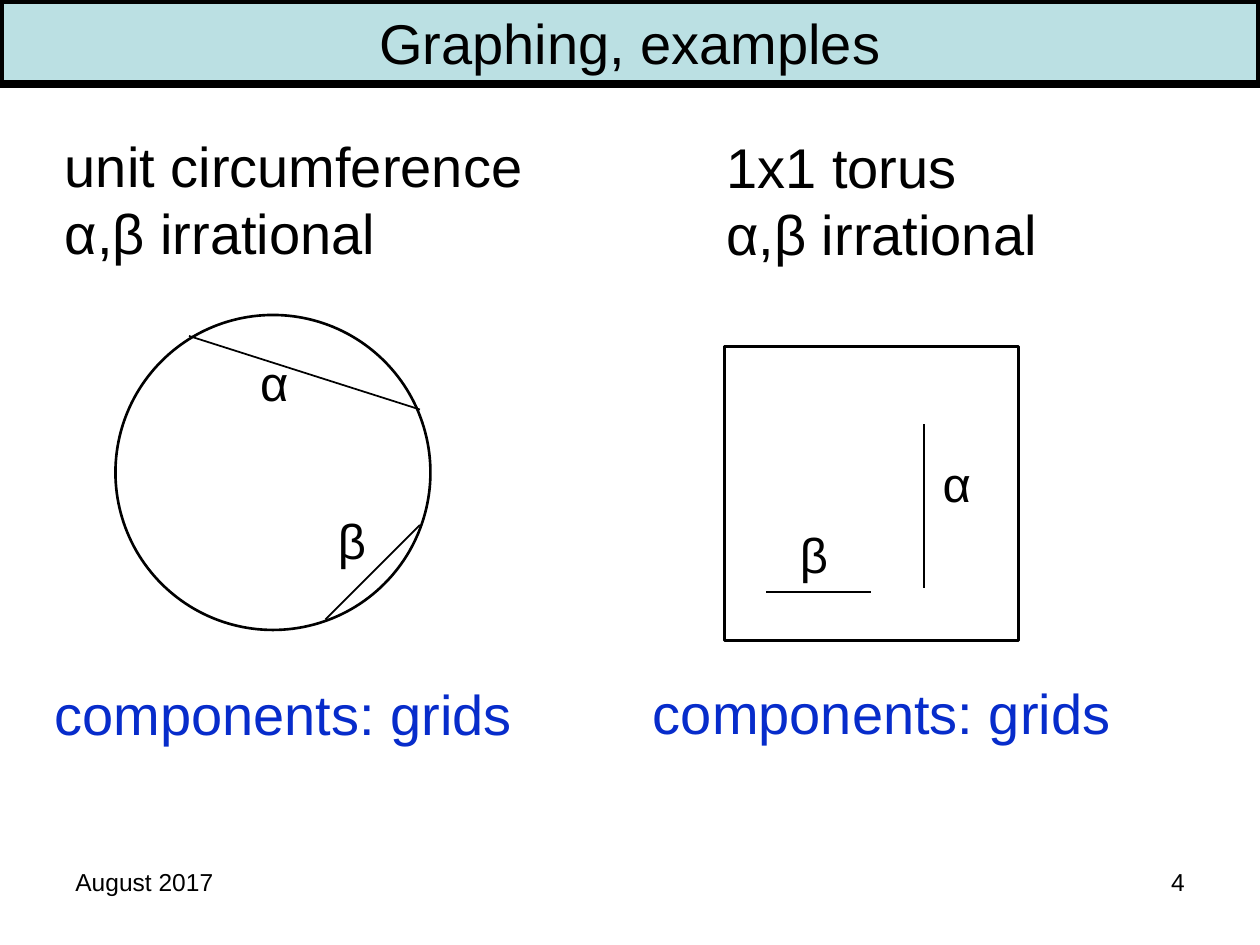
from lxml.etree import SubElement
from pptx import Presentation
from pptx.dml.color import RGBColor
from pptx.enum.shapes import MSO_CONNECTOR as Link, MSO_SHAPE as Shape
from pptx.enum.text import MSO_ANCHOR as Anchor, MSO_AUTO_SIZE as Fit, PP_ALIGN as Align
from pptx.oxml.ns import qn
from pptx.util import Inches, Pt

COLS, ROWS = 120, 90
BLACK, BLUE, TEAL = "000000", "072CCB", "BBE0E3"
hue = RGBColor.from_string

deck = Presentation()
deck.slide_width, deck.slide_height = Inches(10), Inches(7.5)
slide = deck.slides.add_slide(deck.slide_layouts[5])


def grid(*cells):
    """Turn alternating column and row counts into lengths."""
    sizes = (deck.slide_width / COLS, deck.slide_height / ROWS)
    return [round(n * sizes[i % 2]) for i, n in enumerate(cells)]


def write(box, text, size, color=BLACK, align=Align.LEFT):
    frame = box.text_frame
    frame.text = text
    for para in frame.paragraphs:
        para.alignment = align
        for run in para.runs:
            run.font.name, run.font.size = "Arial", Pt(size)
            run.font.color.rgb = hue(color)
    return frame


title = slide.shapes.title
title.left, title.top, title.width, title.height = grid(0, 0, COLS, 8)
title.fill.solid()
title.fill.fore_color.rgb = hue(TEAL)
title.line.color.rgb = hue(BLACK)
title.line.width = Pt(4.5)
frame = write(title, "Graphing, examples", 32, align=Align.CENTER)
frame.vertical_anchor = Anchor.MIDDLE
frame.auto_size = Fit.NONE

for col, text, align in ((6, "August 2017", Align.LEFT), (86, "4", Align.RIGHT)):
    foot = slide.shapes.add_textbox(*grid(col, 82, 28, 6.2))
    write(foot, text, 14, align=align).word_wrap = True

# Each figure: outline, its place, segments from-to, labels
figures = (
    (Shape.OVAL, (11, 30, 30, 30),
     ((18, 32, 40, 39), (40, 50, 31, 59)),
     (("α", 28, BLACK, (23.6, 33, 5.4, 6.8)),
      ("β", 28, BLACK, (31, 48, 5, 6.8)),
      ("unit circumference\nα,β irrational", 32, BLACK, (5, 11.9, 46.3, 14.2)),
      ("components: grids", 32, BLUE, (4, 64.1, 46.3, 7.7)))),
    (Shape.RECTANGLE, (69, 33, 28, 28),
     ((88, 40.4, 88, 56), (73, 56.4, 83, 56.4)),
     (("α", 28, BLACK, (88.6, 42.6, 5.4, 6.8)),
      ("β", 28, BLACK, (75, 49.4, 5, 6.8)),
      ("1x1 torus\nα,β irrational", 32, BLACK, (68, 12, 32.4, 14.2)),
      ("components: grids", 32, BLUE, (61, 64, 46.3, 7.7)))),
)

for kind, place, cuts, labels in figures:
    group = slide.shapes.add_group_shape().shapes
    edge = group.add_shape(kind, *grid(*place))
    edge.shadow.inherit = False
    edge.fill.background()
    edge.line.color.rgb = hue(BLACK)
    edge.line.width = Pt(1.5)
    for ends in cuts:
        cut = group.add_connector(Link.STRAIGHT, *grid(*ends))
        cut.line.color.rgb = hue(BLACK)
        cut.line.width = Pt(1)
        SubElement(cut._element.spPr, qn("a:effectLst"))
    for text, size, color, spot in labels:
        frame = write(group.add_textbox(*grid(*spot)), text, size, color)
        frame.word_wrap = False
        frame.auto_size = Fit.SHAPE_TO_FIT_TEXT

deck.save("out.pptx")
